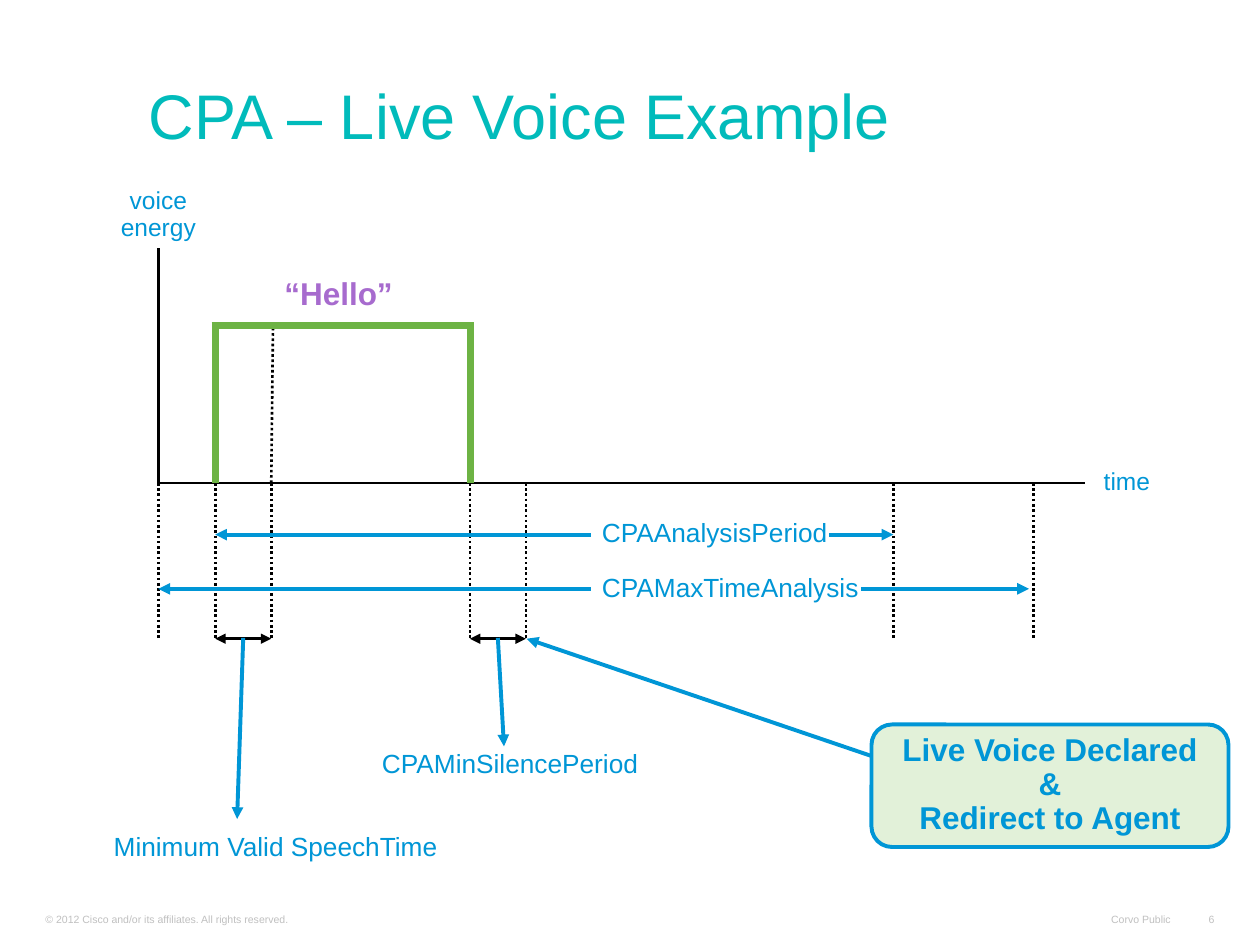
from dataclasses import dataclass

from lxml.etree import SubElement
from pptx import Presentation
from pptx.dml.color import RGBColor
from pptx.enum.dml import MSO_LINE_DASH_STYLE as Dash
from pptx.enum.shapes import MSO_CONNECTOR as Conn, MSO_SHAPE as Shape
from pptx.enum.text import MSO_ANCHOR as Anchor, PP_ALIGN as Align
from pptx.oxml.ns import qn
from pptx.util import Pt


@dataclass(frozen=True)
class Theme:
    """Colours, type sizes and line widths of the slide."""
    font: str = "Arial"
    title: str = "01BBBB"
    accent: str = "0096D6"
    speech: str = "6DB344"
    quote: str = "A76BCE"
    axis: str = "000000"
    panel: str = "E2F1D9"
    muted: str = "C0C0C0"
    title_size: float = 36
    strong_size: float = 18
    label_size: float = 15
    axis_size: float = 14
    footer_size: float = 6
    thin: float = 1.5
    arrow: float = 2.25
    thick: float = 4


T = Theme()


def write(tf, lines, size, color, bold=False, align=Align.LEFT, spacing=0.9,
          anchor=Anchor.TOP, wrap=False, pad=3.2):
    """Fill a text frame with one formatted paragraph per line."""
    tf.word_wrap = wrap
    tf.vertical_anchor = anchor
    tf.margin_left = tf.margin_right = Pt(6.5)
    tf.margin_top = tf.margin_bottom = Pt(pad)
    for i, line in enumerate(lines):
        p = tf.paragraphs[0] if i == 0 else tf.add_paragraph()
        p.alignment = align
        p.line_spacing = spacing
        p.space_before = Pt(0)
        r = p.add_run()
        r.text = line
        r.font.name = T.font
        r.font.size = Pt(size)
        r.font.bold = bold
        r.font.color.rgb = RGBColor.from_string(color)


def label(s, box, lines, size, color, **style):
    """Add a text box at the given box."""
    sp = s.shapes.add_textbox(*map(Pt, box))
    write(sp.text_frame, lines, size, color, **style)


def line(s, start, end, color, width, heads=(), dotted=False):
    """Add a straight line with optional arrowheads and dots."""
    c = s.shapes.add_connector(Conn.STRAIGHT, *map(Pt, (*start, *end)))
    c.line.color.rgb = RGBColor.from_string(color)
    c.line.width = Pt(width)
    if dotted:
        c.line.dash_style = Dash.ROUND_DOT
    ln = c.line._get_or_add_ln()
    for head in heads:
        SubElement(ln, qn(f"a:{head}"), type="triangle")
    SubElement(c._element.spPr, qn("a:effectLst"))


def add_title(s, box, text):
    """Place the title placeholder."""
    sp = s.shapes.title
    sp.left, sp.top, sp.width, sp.height = map(Pt, box)
    write(sp.text_frame, [text], T.title_size, T.title, spacing=0.8,
          anchor=Anchor.BOTTOM, wrap=True, pad=3.6)


def add_footer(s, box):
    """Place copyright, classification and page number along the bottom."""
    x, y, w, h = box
    for dx, width, text, align in (
            (0, 269, "© 2012 Cisco and/or its affiliates. All rights reserved.", Align.LEFT),
            (w - 72, 47, "Corvo Public", Align.RIGHT),
            (w - 20, 20, "6", Align.RIGHT)):
        label(s, (x + dx, y, width, h), [text], T.footer_size, T.muted,
              align=align, spacing=1, anchor=Anchor.BOTTOM)


def add_timeline(s, box):
    """Draw the axes, the speech pulse and the time markers."""
    x, y, w, h = box
    base, low, top = y + h, y + h + 89.5, y + 44
    begin, valid, end, silence, analysis, limit = (
        x + d for d in (32.5, 64.5, 178, 210, 420, 500))
    line(s, (x, y), (x, base), T.axis, T.thin)
    line(s, (x, base), (x + w, base), T.axis, T.thin)
    for mark in (x, begin, valid, end, silence, analysis, limit):
        line(s, (mark, base), (mark, low), T.axis, T.thin, dotted=True)
    line(s, (valid, base), (valid + 1, top), T.axis, T.thin, dotted=True)
    for left, right in ((begin, valid), (end, silence)):
        line(s, (left, low - 0.5), (right, low - 0.5), T.axis, T.thin,
             heads=("headEnd", "tailEnd"))
    for side in (begin, end + 0.5):
        line(s, (side, base), (side, top), T.speech, T.thick)
    line(s, (begin - 2, top), (end + 2.5, top), T.speech, T.thick)
    for dx, dy, text in ((-36, -37, ["voice", "energy"]), (w - 12, h - 18.5, ["time"])):
        label(s, (x + dx, y + dy, 72, 36), text, T.axis_size, T.accent,
              align=Align.CENTER, anchor=Anchor.MIDDLE)
    label(s, (x + 65.5, y + 14, 75.5, 26.5), ["“Hello”"], T.strong_size, T.quote, bold=True)


def add_periods(s, box):
    """Draw the two named periods with arrows out to their markers."""
    x, y, w, h = box
    for dy, text, width, left, inner, right in (
            (0, "CPAAnalysisPeriod", 143.5, 32.5, 383.5, 420),
            (h, "CPAMaxTimeAnalysis", 161.5, 0, 401.5, w)):
        label(s, (x + 247, y + dy - 11.5, width, 23), [text], T.label_size, T.accent)
        for start, end in ((247, left), (inner, right)):
            line(s, (x + start, y + dy), (x + end, y + dy), T.accent, T.arrow,
                 heads=("tailEnd",))


def add_thresholds(s, box):
    """Draw the two threshold names with arrows from their intervals."""
    x, y, w, h = box
    for start, tip, reach, dx, dy, width, text in (
            (103, 99.5, h - 20, 0, h - 14.5, 243, "Minimum Valid SpeechTime"),
            (248.5, 252, 62, 162, 61.5, w - 162, "CPAMinSilencePeriod")):
        line(s, (x + start, y), (x + tip, y + reach), T.accent, T.arrow, heads=("tailEnd",))
        label(s, (x + dx, y + dy, width, 23), [text], T.label_size, T.accent,
              align=Align.CENTER, wrap=True)


def add_callout(s, box, target):
    """Draw the outcome panel and its arrow to the target point."""
    x, y, w, h = box
    sp = s.shapes.add_shape(Shape.ROUNDED_RECTANGLE, *map(Pt, box))
    sp.shadow.inherit = False
    sp.fill.solid()
    sp.fill.fore_color.rgb = RGBColor.from_string(T.panel)
    sp.line.color.rgb = RGBColor.from_string(T.accent)
    sp.line.width = Pt(T.arrow)
    write(sp.text_frame, ["Live Voice Declared", "&", "Redirect to Agent"],
          T.strong_size, T.accent, bold=True, align=Align.CENTER, anchor=Anchor.MIDDLE)
    line(s, (x, y + 18), target, T.accent, T.arrow, heads=("tailEnd",))


def main():
    """Build the slide."""
    prs = Presentation()
    prs.slide_width, prs.slide_height = Pt(720), Pt(540)
    s = prs.slides.add_slide(prs.slide_layouts[5])
    add_title(s, (78.5, 24, 641.5, 66), "CPA – Live Voice Example")
    add_timeline(s, (90.5, 142, 529.5, 134))
    add_periods(s, (90.5, 305.5, 497.5, 31))
    add_thresholds(s, (36, 364.5, 349, 123.5))
    add_callout(s, (498, 414, 204, 70), (301, 365))
    add_footer(s, (19.5, 518.5, 681, 13.5))
    prs.save("out.pptx")


if __name__ == "__main__":
    main()
